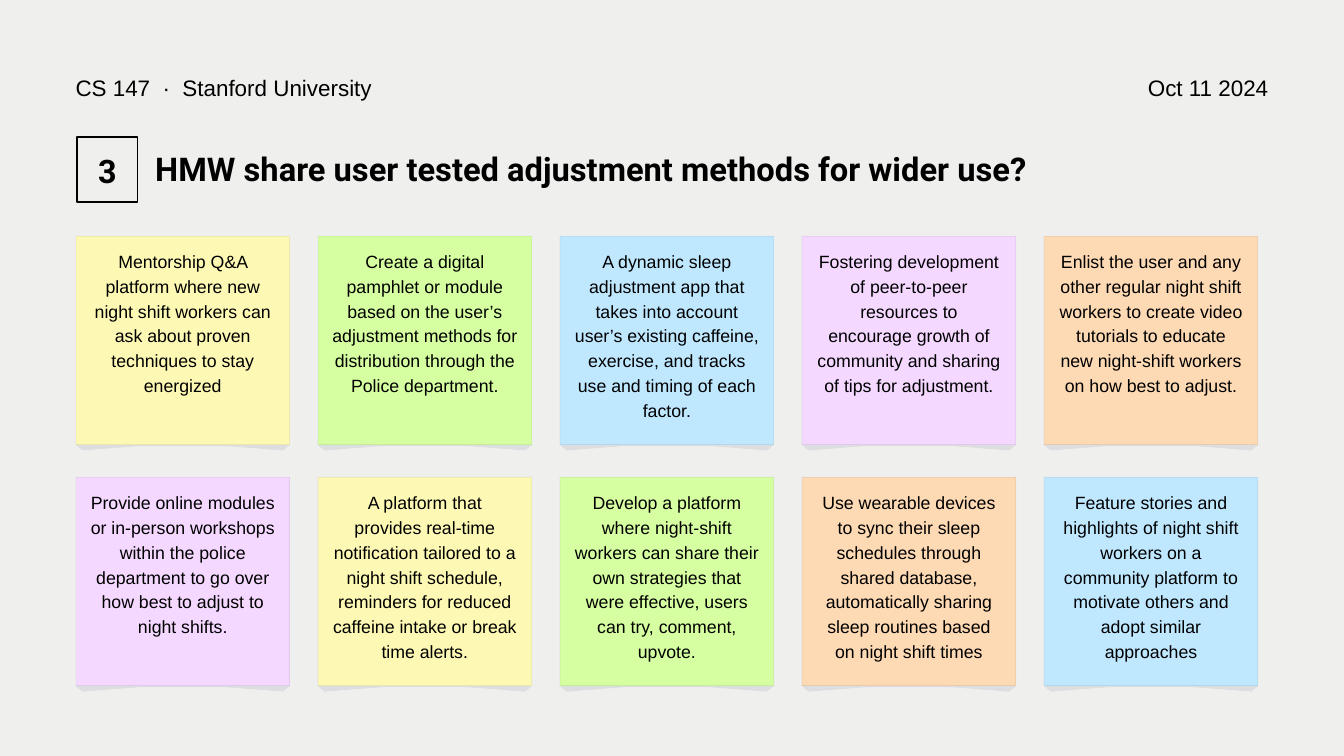
from lxml.etree import SubElement
from pptx import Presentation
from pptx.dml.color import RGBColor
from pptx.enum.shapes import MSO_SHAPE
from pptx.enum.text import MSO_ANCHOR, MSO_AUTO_SIZE, PP_ALIGN
from pptx.oxml.ns import qn
from pptx.util import Pt

BACKGROUND = RGBColor(0xEF, 0xEF, 0xEE)
BLACK = RGBColor(0x00, 0x00, 0x00)
SHADE = RGBColor(0x39, 0x4C, 0x60)
YELLOW = RGBColor(0xFD, 0xF9, 0xB4)
GREEN = RGBColor(0xD6, 0xFF, 0xA1)
BLUE = RGBColor(0xBF, 0xE8, 0xFF)
PURPLE = RGBColor(0xF5, 0xD8, 0xFF)
ORANGE = RGBColor(0xFD, 0xD9, 0xB4)

LEFT, TOP = 80.9, 252.7
NOTE_W, NOTE_H = 229.8, 223.9
COLUMN_STEP, ROW_STEP = 259.35, 258.4

NOTES = [
    [
        (YELLOW, "Mentorship Q&A platform where new night shift workers can ask about proven techniques to stay energized"),
        (GREEN, "Create a digital pamphlet or module based on the user’s adjustment methods for distribution through the Police department."),
        (BLUE, "A dynamic sleep adjustment app that takes into account user’s existing caffeine, exercise, and tracks use and timing of each factor."),
        (PURPLE, "Fostering development of peer-to-peer resources to encourage growth of community and sharing of tips for adjustment."),
        (ORANGE, "Enlist the user and any other regular night shift workers to create video tutorials to educate new night-shift workers on how best to adjust."),
    ],
    [
        (PURPLE, "Provide online modules or in-person workshops within the police department to go over how best to adjust to night shifts."),
        (YELLOW, "A platform that provides real-time notification tailored to a night shift schedule, reminders for reduced caffeine intake or break time alerts."),
        (GREEN, "Develop a platform where night-shift workers can share their own strategies that were effective, users can try, comment, upvote."),
        (ORANGE, "Use wearable devices to sync their sleep schedules through shared database, automatically sharing sleep routines based on night shift times"),
        (BLUE, "Feature stories and highlights of night shift workers on a community platform to motivate others and adopt similar approaches"),
    ],
]


def curve(start, control, end, steps=8):
    points = []
    for i in range(steps + 1):
        t = i / steps
        weights = ((1 - t) ** 2 * (1 + 2 * t), 3 * (1 - t) * t * t, t ** 3)
        points.append(tuple(sum(w * p[k] for w, p in zip(weights, (start, control, end)))
                            for k in (0, 1)))
    return points


def rectangle(x, y, w, h):
    return [(x, y), (x + w, y), (x + w, y + h), (x, y + h)]


class Deck:
    font = "Arial"
    heading_font = "Roboto"

    def __init__(self, prs):
        self.s = prs.slides.add_slide(prs.slide_layouts[5])
        self.s.background.fill.solid()
        self.s.background.fill.fore_color.rgb = BACKGROUND

    def fill_text(self, sp, text, size, spacing, font=None, bold=False, align=PP_ALIGN.LEFT, inset=0):
        tf = sp.text_frame
        tf.word_wrap = True
        tf.auto_size = MSO_AUTO_SIZE.NONE
        tf.vertical_anchor = MSO_ANCHOR.TOP
        tf.margin_left = tf.margin_right = tf.margin_top = tf.margin_bottom = Pt(inset)
        p = tf.paragraphs[0]
        p.alignment = align
        p.line_spacing = Pt(spacing)
        p.space_before = Pt(0)
        r = p.add_run()
        r.text = text
        r.font.name = font or self.font
        r.font.size = Pt(size)
        r.font.bold = bold
        r.font.color.rgb = BLACK

    def title(self, x, y, w, h, text):
        sp = self.s.shapes.title
        sp.left, sp.top, sp.width, sp.height = Pt(x), Pt(y), Pt(w), Pt(h)
        self.fill_text(sp, text, 35, 41.3, self.heading_font, True)

    def text(self, x, y, w, h, text, size, spacing, shapes=None, **style):
        sp = (shapes or self.s.shapes).add_textbox(Pt(x), Pt(y), Pt(w), Pt(h))
        self.fill_text(sp, text, size, spacing, **style)

    def frame(self, x, y, w, h):
        sp = self.s.shapes.add_shape(MSO_SHAPE.RECTANGLE, Pt(x), Pt(y), Pt(w), Pt(h))
        sp.shadow.inherit = False
        sp.fill.background()
        sp.line.color.rgb = BLACK
        sp.line.width = Pt(1.5)

    def outline(self, shapes, contours, color, opacity=100):
        contours = [[(Pt(x), Pt(y)) for x, y in points] for points in contours]
        builder = shapes.build_freeform(*contours[0][0])
        for i, points in enumerate(contours):
            if i:
                builder.move_to(*points[0])
            builder.add_line_segments(points[1:], close=True)
        sp = builder.convert_to_shape()
        sp.shadow.inherit = False
        sp.line.fill.background()
        sp.fill.solid()
        sp.fill.fore_color.rgb = color
        if opacity < 100:
            clr = next(sp.element.spPr.iter(qn("a:srgbClr")))
            SubElement(clr, qn("a:alpha"), val=str(opacity * 1000))

    def note(self, x, y, color, text):
        shapes = self.s.shapes.add_group_shape().shapes
        bottom = y + NOTE_H
        curl = curve((7.6, 6.1), (66, 1.3), (71.7, 1.3))
        shadow = [(x, bottom), (x + NOTE_W, bottom)]
        shadow += [(x + NOTE_W - dx, bottom + dy) for dx, dy in curl]
        shadow += [(x + dx, bottom + dy) for dx, dy in reversed(curl)]
        border = rectangle(x, y, NOTE_W, NOTE_H)
        inside = rectangle(x + 0.8, y + 0.8, NOTE_W - 1.6, NOTE_H - 1.6)
        self.outline(shapes, [border], color)
        self.outline(shapes, [shadow, border, inside], SHADE, 10)
        self.text(x, y - 3.6, NOTE_W, NOTE_H + 3.6, text, 19, 26.6, shapes,
                  align=PP_ALIGN.CENTER, inset=15.8)


def main():
    prs = Presentation()
    prs.slide_width, prs.slide_height = Pt(1440), Pt(810)
    deck = Deck(prs)
    deck.title(166.3, 159.8, 1222, 41, "HMW share user tested adjustment methods for wider use?")
    for row, notes in enumerate(NOTES):
        for column, (color, text) in enumerate(notes):
            deck.note(LEFT + column * COLUMN_STEP, TOP + row * ROW_STEP, color, text)
    deck.frame(82.5, 147, 65, 69.4)
    deck.text(LEFT, 74.9, 489, 31.7, "CS 147  ·  Stanford University", 24, 33.6)
    deck.text(869.8, 74.9, 489, 31.7, "Oct 11 2024", 24, 33.6, align=PP_ALIGN.RIGHT)
    deck.text(100, 154.8, 30, 47.5, "3", 34.7, 48.6, font=deck.heading_font,
              bold=True, align=PP_ALIGN.CENTER)
    prs.save("out.pptx")


if __name__ == "__main__":
    main()
